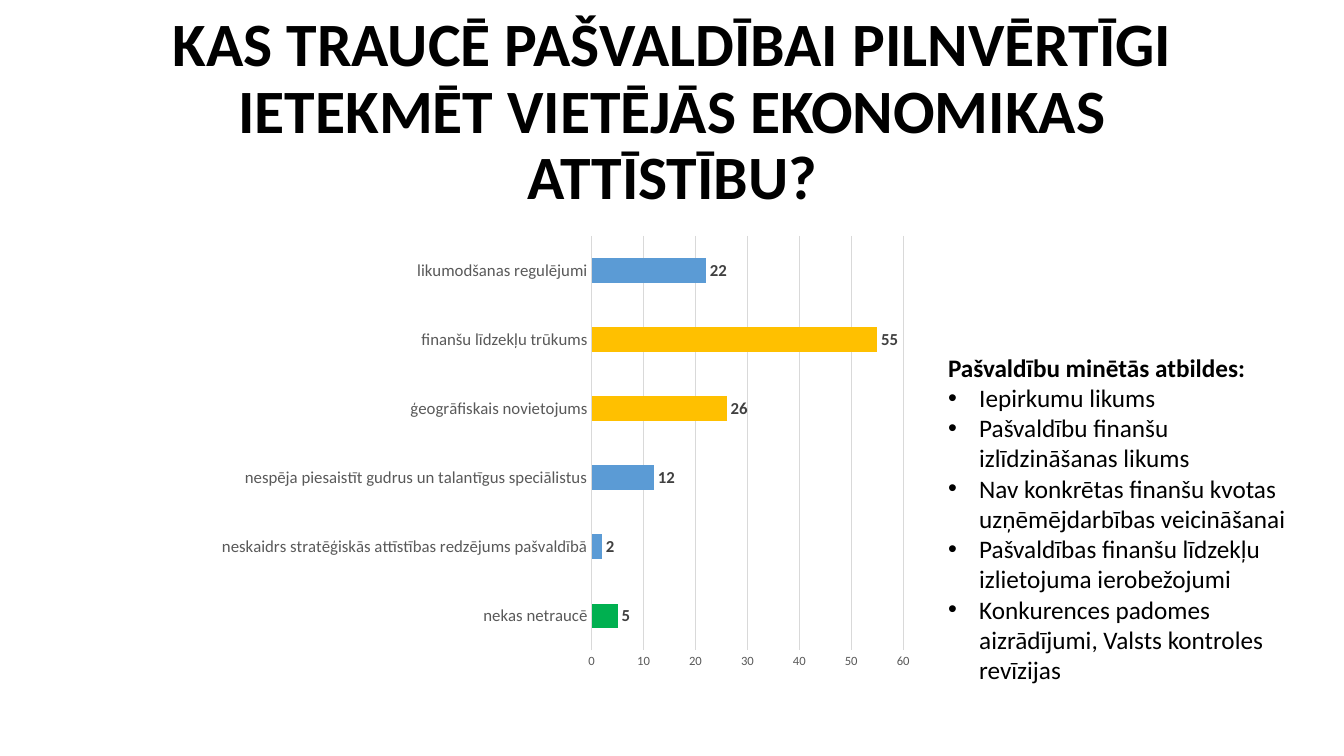
"""Build a slide with a bar chart of what hinders local growth."""
from lxml.etree import SubElement
from pptx import Presentation
from pptx.chart.data import CategoryChartData
from pptx.dml.color import RGBColor
from pptx.enum.chart import XL_CHART_TYPE, XL_LABEL_POSITION, XL_TICK_MARK
from pptx.enum.text import MSO_ANCHOR, PP_ALIGN
from pptx.oxml.ns import qn
from pptx.util import Inches, Pt

BLACK = RGBColor(0x00, 0x00, 0x00)
DARK = RGBColor(0x40, 0x40, 0x40)
GRAY = RGBColor(0x59, 0x59, 0x59)
PALE = RGBColor(0xD9, 0xD9, 0xD9)
BLUE = RGBColor(0x5B, 0x9B, 0xD5)
GOLD = RGBColor(0xFF, 0xC0, 0x00)
GREEN = RGBColor(0x00, 0xB0, 0x50)

WIDE, HIGH = Inches(13.33), Inches(7.5)
FACE = "Calibri"
INDENT = Inches(0.31)

TITLE = ("KAS TRAUCĒ PAŠVALDĪBAI PILNVĒRTĪGI IETEKMĒT "
         "VIETĒJĀS EKONOMIKAS ATTĪSTĪBU?")
HEAD = "Pašvaldību minētās atbildes:"
ITEMS = [
    "Iepirkumu likums",
    "Pašvaldību finanšu izlīdzināšanas likums",
    "Nav konkrētas finanšu kvotas uzņēmējdarbības veicināšanai",
    "Pašvaldības finanšu līdzekļu izlietojuma ierobežojumi",
    "Konkurences padomes aizrādījumi, Valsts kontroles revīzijas",
]
BARS = [
    ("nekas netraucē", 5, GREEN),
    ("neskaidrs stratēģiskās attīstības redzējums pašvaldībā", 2, BLUE),
    ("nespēja piesaistīt gudrus un talantīgus speciālistus", 12, BLUE),
    ("ģeogrāfiskais novietojums", 26, GOLD),
    ("finanšu līdzekļu trūkums", 55, GOLD),
    ("likumodšanas regulējumi", 22, BLUE),
]


def place(left, top, width, height):
    """Turn shares of the slide into lengths."""
    return (int(WIDE * left), int(HIGH * top),
            int(WIDE * width), int(HIGH * height))


def apply(item, form):
    """Set each attribute named in a format dict."""
    for name, value in form.items():
        setattr(item, name, value)


def style(font, size, color, bold=False):
    """Give a font its face, size, weight and colour."""
    apply(font, {"name": FACE, "size": Pt(size), "bold": bold})
    font.color.rgb = color


def rule(line):
    """Draw a thin pale line."""
    line.color.rgb = PALE
    line.width = Pt(0.75)


def add_box(slide, spot, anchor):
    """Add a wrapping text box and return its frame."""
    frame = slide.shapes.add_textbox(*spot).text_frame
    apply(frame, {"word_wrap": True, "vertical_anchor": anchor})
    return frame


def write(para, text, size, bold=False):
    """Put one black run in a paragraph."""
    run = para.add_run()
    run.text = text
    style(run.font, size, BLACK, bold)


def add_title(slide):
    """Add the centred heading."""
    frame = add_box(slide, place(0.069, 0.053, 0.863, 0.193),
                    MSO_ANCHOR.MIDDLE)
    para = frame.paragraphs[0]
    apply(para, {"alignment": PP_ALIGN.CENTER, "line_spacing": 0.9})
    write(para, TITLE, 44, True)


def add_list(slide):
    """Add the bold lead line and its bullets."""
    frame = add_box(slide, place(0.698, 0.459, 0.279, 0.457), MSO_ANCHOR.TOP)
    write(frame.paragraphs[0], HEAD, 18, True)
    for item in ITEMS:
        para = frame.add_paragraph()
        props = para._p.get_or_add_pPr()
        props.set("marL", str(INDENT))
        props.set("indent", str(-INDENT))
        SubElement(props, qn("a:buFont"), typeface="Arial")
        SubElement(props, qn("a:buChar"), char="•")
        write(para, item, 18)


def set_axis(axis, size):
    """Drop the ticks and style the labels of an axis."""
    apply(axis, {"major_tick_mark": XL_TICK_MARK.NONE,
                 "minor_tick_mark": XL_TICK_MARK.NONE})
    style(axis.tick_labels.font, size, GRAY)


def add_bars(slide):
    """Add the bar chart of answers."""
    names, values, colors = zip(*BARS)
    data = CategoryChartData()
    data.categories = names
    data.add_series("Series 1", values)
    chart = slide.shapes.add_chart(
        XL_CHART_TYPE.BAR_CLUSTERED,
        *place(0.1545, 0.3, 0.533, 0.597), data).chart
    apply(chart, {"has_title": False, "has_legend": False})
    style(chart.font, 10, BLACK)

    set_axis(chart.category_axis, 12)
    rule(chart.category_axis.format.line)
    set_axis(chart.value_axis, 9)
    chart.value_axis.format.line.fill.background()
    chart.value_axis.has_major_gridlines = True
    rule(chart.value_axis.major_gridlines.format.line)

    plot = chart.plots[0]
    apply(plot, {"gap_width": 182, "vary_by_categories": False,
                 "has_data_labels": True})
    apply(plot.data_labels, {"show_value": True,
                             "position": XL_LABEL_POSITION.OUTSIDE_END})
    style(plot.data_labels.font, 12, DARK, True)

    bars = plot.series[0]
    bars.format.fill.solid()
    bars.format.fill.fore_color.rgb = BLUE
    for index, color in enumerate(colors):
        if color != BLUE:
            fill = bars.points[index].format.fill
            fill.solid()
            fill.fore_color.rgb = color


def main():
    """Build and save the slide."""
    deck = Presentation()
    apply(deck, {"slide_width": WIDE, "slide_height": HIGH})
    slide = deck.slides.add_slide(deck.slide_layouts[6])
    add_title(slide)
    add_bars(slide)
    add_list(slide)
    deck.save("out.pptx")


if __name__ == "__main__":
    main()
